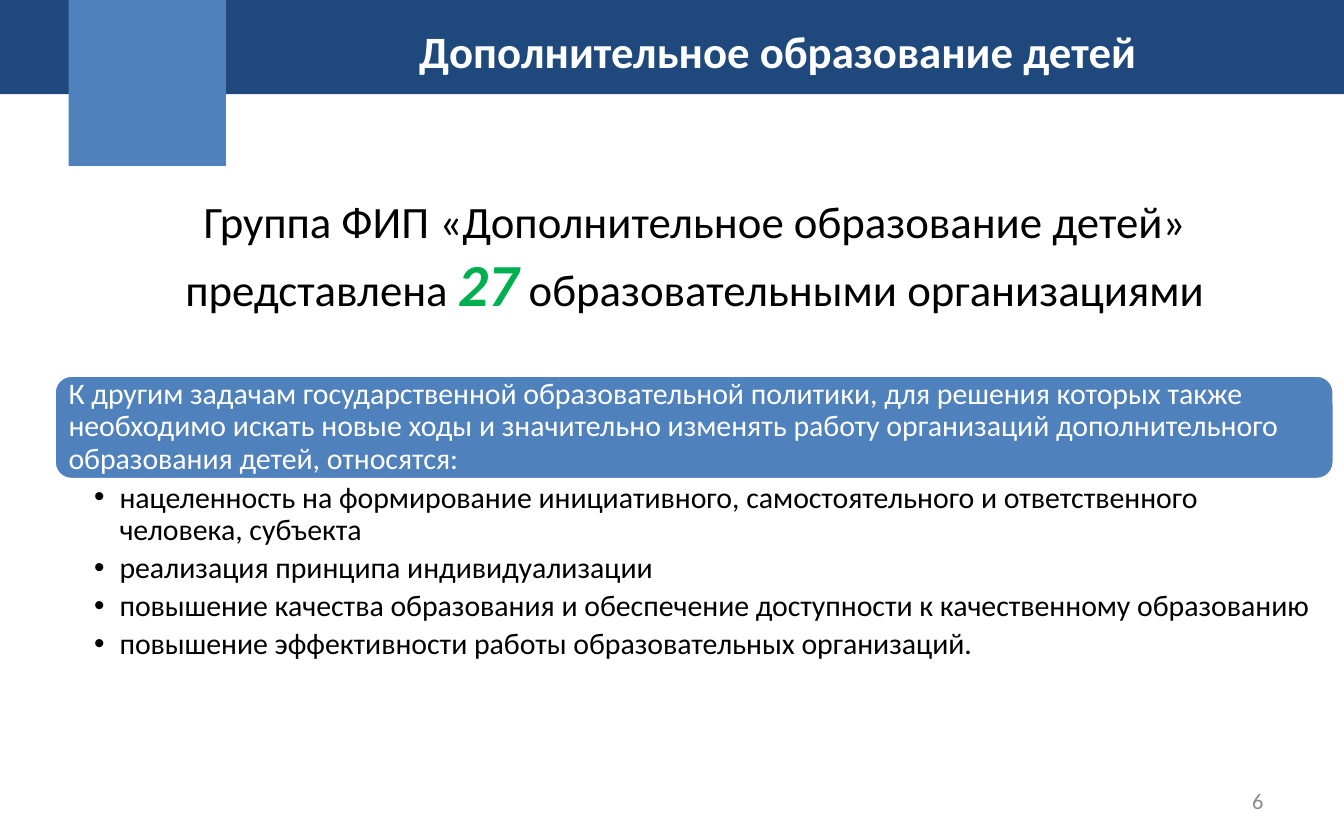
from lxml.etree import SubElement
from pptx import Presentation
from pptx.dml.color import RGBColor
from pptx.enum.shapes import MSO_SHAPE as Shape
from pptx.enum.text import MSO_ANCHOR as Anchor, PP_ALIGN as Align
from pptx.oxml.ns import qn
from pptx.util import Cm, Pt

NAVY = RGBColor(0x1F, 0x49, 0x7D)
BLUE = RGBColor(0x4F, 0x81, 0xBD)
GREEN = RGBColor(0x00, 0xB0, 0x50)
GRAY = RGBColor(0x8C, 0x8C, 0x8C)
BLACK = RGBColor(0, 0, 0)
WHITE = RGBColor(255, 255, 255)

deck = Presentation()
deck.slide_width, deck.slide_height = Cm(25.4), Cm(15.88)
page = deck.slides.add_slide(deck.slide_layouts[6])


def add_block(kind, left, top, width, height, fill):
    block = page.shapes.add_shape(kind, Cm(left), Cm(top), Cm(width), Cm(height))
    block.shadow.inherit = False
    block.fill.solid()
    block.fill.fore_color.rgb = fill
    block.line.fill.background()
    return block


def add_span(para, text, size, color, bold=False, italic=False):
    span = para.add_run()
    span.text = text
    font = span.font
    font.name, font.size, font.bold, font.italic = "Calibri", Pt(size), bold, italic
    font.color.rgb = color


add_block(Shape.RECTANGLE, 0, 0, 25.4, 1.78, NAVY)
add_block(Shape.RECTANGLE, 1.3, 0, 2.97, 3.14, BLUE)

TEXTS = [
    (1.7, 3.53, 22.86, 2.84, Align.CENTER, Anchor.TOP, [
        ("Группа ФИП «Дополнительное образование детей» представлена ", 24, BLACK),
        ("27", 32, GREEN, True, True),
        (" образовательными организациями", 24, BLACK)]),
    (18.2, 14.71, 5.93, 0.85, Align.RIGHT, Anchor.MIDDLE, [("6", 12, GRAY)]),
    (3.3, 0.33, 22.8, 1.28, Align.CENTER, Anchor.TOP, [
        ("Дополнительное образование детей", 24, WHITE, True)]),
]
for left, top, width, height, align, anchor, spans in TEXTS:
    box = page.shapes.add_textbox(Cm(left), Cm(top), Cm(width), Cm(height))
    frame = box.text_frame
    frame.word_wrap = True
    frame.vertical_anchor = anchor
    para = frame.paragraphs[0]
    para.alignment = align
    for span in spans:
        add_span(para, *span)

banner = add_block(Shape.ROUNDED_RECTANGLE, 1.02, 7.09, 24.2, 1.98, BLUE)
banner.line.color.rgb = WHITE
banner.line.width = Pt(2)
frame = banner.text_frame
frame.word_wrap = True
frame.vertical_anchor = Anchor.MIDDLE
frame.margin_left = frame.margin_right = Cm(0.18)
frame.margin_top = frame.margin_bottom = Cm(0)
para = frame.paragraphs[0]
para.alignment = Align.LEFT
para.line_spacing = 0.9
add_span(para, "К другим задачам государственной образовательной политики, для решения "
         "которых также необходимо искать новые ходы и значительно изменять работу "
         "организаций дополнительного образования детей, относятся:", 16, WHITE)

GOALS = [
    "нацеленность на формирование инициативного, самостоятельного и ответственного человека, субъекта",
    "реализация принципа индивидуализации",
    "повышение качества образования и обеспечение доступности к качественному образованию",
    "повышение эффективности работы образовательных организаций.",
]
goals_box = page.shapes.add_textbox(Cm(1.02), Cm(9.07), Cm(24.2), Cm(3.68))
frame = goals_box.text_frame
frame.word_wrap = True
frame.margin_left, frame.margin_right = Cm(0.76), Cm(0.3)
frame.margin_top = frame.margin_bottom = Cm(0.05)
for index, goal in enumerate(GOALS):
    para = frame.add_paragraph() if index else frame.paragraphs[0]
    para.line_spacing = 0.9
    para.space_after = Pt(3.2)
    settings = para._p.get_or_add_pPr()
    settings.set("marL", str(Cm(0.48)))
    settings.set("indent", str(-Cm(0.48)))
    SubElement(settings, qn("a:buFont"), typeface="Arial")
    SubElement(settings, qn("a:buChar"), char="•")
    add_span(para, goal, 16, BLACK)

deck.save("out.pptx")
